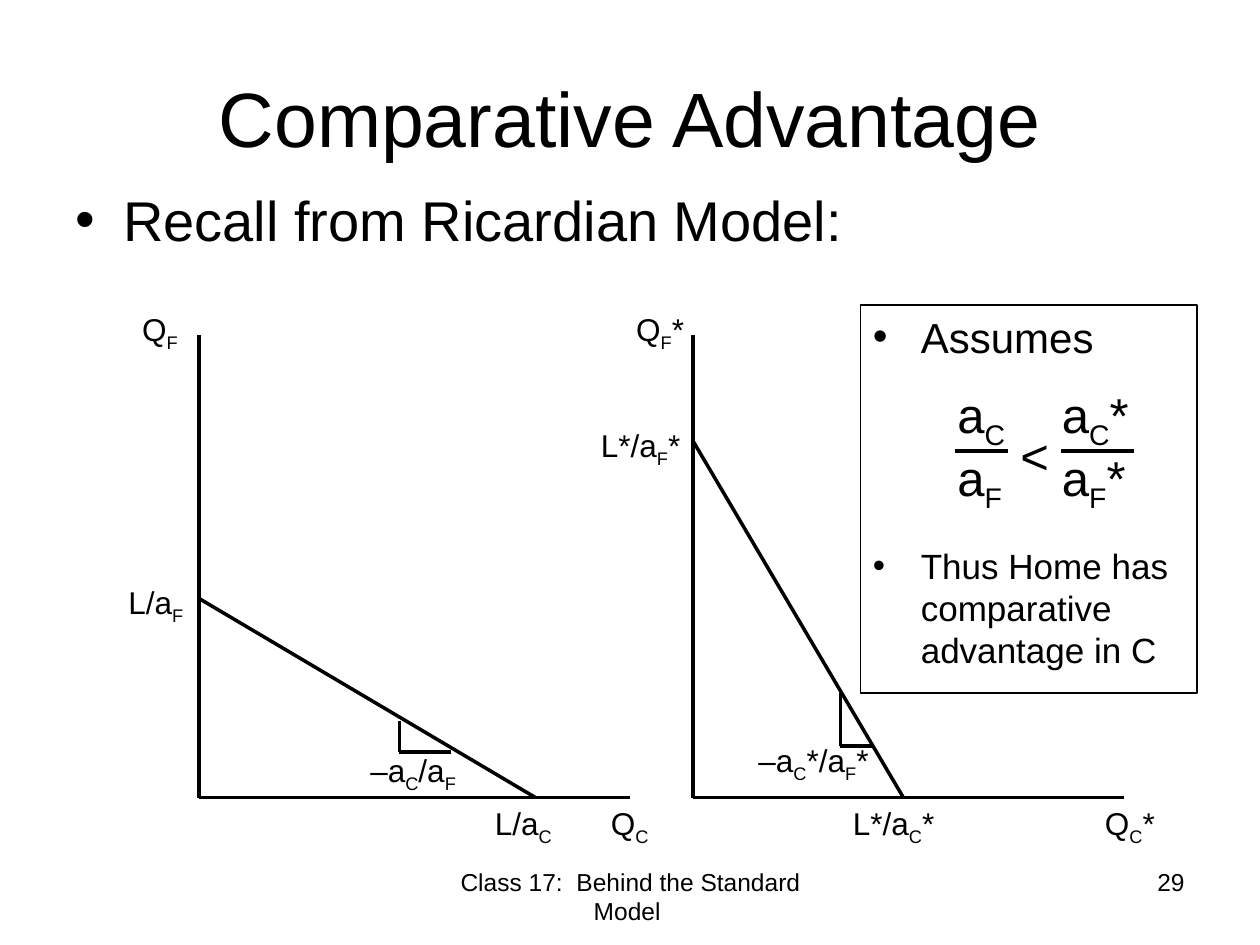
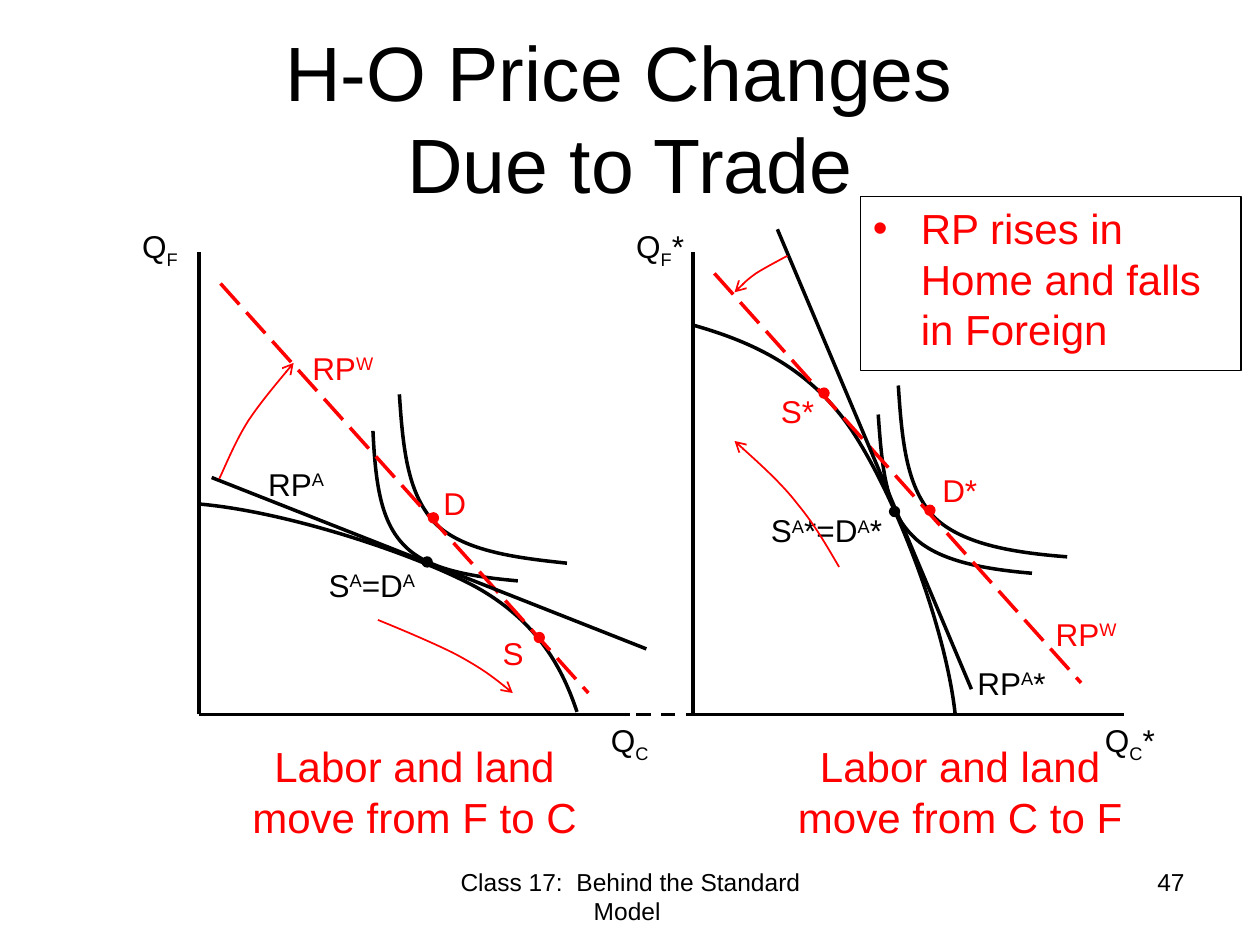
"""Build two trade-theory slides: Ricardian comparative advantage and H-O price changes."""
from lxml import etree
from pptx import Presentation
from pptx.dml.color import RGBColor
from pptx.enum.dml import MSO_LINE
from pptx.enum.shapes import MSO_CONNECTOR, MSO_SHAPE
from pptx.enum.text import MSO_ANCHOR, PP_ALIGN
from pptx.oxml.ns import qn
from pptx.util import Inches, Pt

BLACK = RGBColor(0x00, 0x00, 0x00)
RED = RGBColor(0xFF, 0x00, 0x00)
LEFT, CENTER, RIGHT = PP_ALIGN.LEFT, PP_ALIGN.CENTER, PP_ALIGN.RIGHT
TOP, MIDDLE = MSO_ANCHOR.TOP, MSO_ANCHOR.MIDDLE
STRAIGHT, RECTANGLE, OVAL = MSO_CONNECTOR.STRAIGHT, MSO_SHAPE.RECTANGLE, MSO_SHAPE.OVAL
DASH, LONG_DASH = MSO_LINE.DASH, MSO_LINE.LONG_DASH

FONT = "Arial"
FOOTER = "Class 17:  Behind the Standard Model "
BASELINES = {"_": "-25000", "^": "30000"}
LABEL_HEIGHTS = {18: 0.4, 28: 0.57}
HOME_X, FOREIGN_X = 1.58, 5.5
AXIS_WIDTH, AXIS_HEIGHT = 3.42, 3.67
DOT = 0.08
UNITS_PER_INCH = 100

RICARDO = {
    "title": ["Comparative Advantage"],
    "number": "29",
    "base": 6.33,
    "lines": [
        ((1.58, 4.75), (4.25, 6.33)),
        ((5.5, 3.5), (7.17, 6.33)),
        ((7.58, 3.58), (8, 3.58)),
        ((8.42, 3.58), (9, 3.58)),
        ((6.67, 5.5), (6.67, 5.92)),
        ((6.92, 5.92), (6.67, 5.92)),
        ((3.17, 5.72), (3.17, 5.97)),
        ((3.58, 5.97), (3.17, 5.97)),
    ],
    "labels": [
        ("L/a_F", 0.92, 4.58, 0.66, 18, BLACK),
        ("L/a_C", 3.83, 6.33, 0.67, 18, BLACK),
        ("L*/a_F*", 4.67, 3.33, 0.85, 18, BLACK),
        ("L*/a_C*", 6.67, 6.33, 0.87, 18, BLACK),
        ("–a_C*/a_F*", 5.92, 5.83, 1.11, 18, BLACK),
        ("–a_C/a_F", 2.84, 5.91, 0.92, 18, BLACK),
        ("a_C", 7.5, 3, 0.67, 28, BLACK),
        ("a_F", 7.5, 3.5, 0.67, 28, BLACK),
        ("a_C*", 8.33, 3, 1.03, 28, BLACK),
        ("a_F*", 8.33, 3.5, 0.75, 28, BLACK),
        ("<", 8, 3.33, 0.42, 28, BLACK),
    ],
    "note_box": (6.83, 2.42, 2.67, 3.08),
    "notes": [("Assumes", 24, BLACK, 0),
              ("Thus Home has comparative advantage in C", 20, BLACK, 104.5)],
}

PRICES = {
    "title": ["H-O Price Changes ", "Due to Trade"],
    "number": "47",
    "base": 5.67,
    "lines": [
        ((1.75, 2.25), (4.67, 5.5), RED, LONG_DASH),
        ((5.67, 2.17), (8.58, 5.42), RED, LONG_DASH),
        ((5.75, 5.67), (4.92, 5.67), BLACK, DASH),
        ((1.68, 3.79), (5.13, 5.15)),
        ((6.17, 1.82), (7.71, 5.47)),
    ],
    "curves": [
        [(1.58, 4), (2.27, 4.06), (3.28, 4.39), (3.78, 4.66),
         (4.28, 4.94), (4.47, 5.32), (4.58, 5.65)],
        [(7.58, 5.66), (7.5, 4.95), (7.1, 3.92), (6.75, 3.4),
         (6.4, 2.89), (5.92, 2.7), (5.5, 2.58)],
        [(4.5, 4.47), (4.12, 4.43), (3.69, 4.38), (3.46, 4.16),
         (3.24, 3.93), (3.2, 3.59), (3.17, 3.13)],
        [(8.47, 4.42), (8.08, 4.39), (7.65, 4.33), (7.42, 4.11),
         (7.2, 3.88), (7.16, 3.53), (7.13, 3.06)],
        [(8.19, 4.55), (7.84, 4.52), (7.44, 4.46), (7.24, 4.25),
         (7.03, 4.04), (7, 3.72), (6.97, 3.29)],
        [(4.11, 4.61), (3.78, 4.58), (3.4, 4.53), (3.21, 4.33),
         (3.02, 4.14), (2.98, 3.83), (2.96, 3.42)],
    ],
    "shifts": [
        [(1.74, 3.8), (1.81, 3.65), (1.87, 3.5), (1.97, 3.34),
         (2.07, 3.19), (2.33, 2.88), (2.33, 2.88)],
        [(6.25, 2.03), (6.25, 2.03), (6.06, 2.13), (6, 2.17),
         (5.93, 2.22), (5.88, 2.27), (5.83, 2.32)],
        [(3, 4.92), (3, 4.92), (3.47, 5.11), (3.65, 5.21),
         (3.83, 5.31), (3.95, 5.4), (4.07, 5.5)],
        [(6.66, 4.5), (6.56, 4.33), (6.47, 4.17), (6.33, 4),
         (6.2, 3.83), (5.83, 3.5), (5.83, 3.5)],
    ],
    "dots": [(4.24, 5.02, RED), (6.5, 3.08, RED), (3.4, 4.07, RED),
             (7.34, 4.01, RED), (3.35, 4.42, BLACK), (7.06, 4.02, BLACK)],
    "labels": [
        ("S^A=D^A", 2.51, 4.44, 0.93, 18, BLACK),
        ("D", 3.42, 3.79, 0.38, 18, RED),
        ("S*", 6.1, 3.06, 0.47, 18, RED),
        ("D*", 7.38, 3.69, 0.48, 18, RED),
        ("S^A*=D^A*", 6.02, 4.01, 1.12, 18, BLACK),
        ("RP^A", 2.03, 3.64, 0.66, 18, BLACK),
        ("RP^W", 2.38, 2.72, 0.71, 18, RED),
        ("RP^A*", 7.66, 5.22, 0.76, 18, BLACK),
        ("RP^W", 8.28, 4.83, 0.71, 18, RED),
        ("S", 3.89, 4.98, 0.37, 18, RED),
    ],
    "note_box": (6.83, 1.56, 3.02, 1.38),
    "notes": [("RP rises in Home and falls in Foreign", 24, RED, 0)],
}
RECALL = [("Recall from Ricardian Model:", 32, BLACK, 0)]
RECALL_BOX = (0.5, 1.42, 9, 0.83)
MOVES = [("Labor and land move from F to C", 1.75), ("Labor and land move from C to F", 6.08)]


def add_run(paragraph, text, size, color, baseline=None):
    run = paragraph.add_run()
    run.text = text
    run.font.name, run.font.size = FONT, Pt(size)
    run.font.color.rgb = color
    if baseline:
        run._r.get_or_add_rPr().set("baseline", baseline)


def add_marked_runs(paragraph, text, size, color):
    """Turn _x into a subscript and ^x into a superscript."""
    plain, letters = "", iter(text)
    for letter in letters:
        if letter in BASELINES:
            add_run(paragraph, plain, size, color)
            add_run(paragraph, next(letters), size, color, BASELINES[letter])
            plain = ""
        else:
            plain += letter
    if plain:
        add_run(paragraph, plain, size, color)


def add_text(slide, box, lines, size, color=BLACK, align=LEFT, anchor=TOP):
    frame = slide.shapes.add_textbox(*map(Inches, box)).text_frame
    frame.word_wrap, frame.vertical_anchor = True, anchor
    paragraph = frame.paragraphs[0]
    paragraph.alignment = align
    for index, line in enumerate(lines):
        if index:
            paragraph.add_line_break()
        add_marked_runs(paragraph, line, size, color)
    return frame


def add_label(slide, text, x, y, width, size, color, height=None):
    box = (x, y, width, height or LABEL_HEIGHTS[size])
    add_text(slide, box, [text], size, color).margin_right = 0


def add_bullets(frame, bullets):
    frame.word_wrap, frame.vertical_anchor = True, TOP
    for index, (text, size, color, space) in enumerate(bullets):
        paragraph = frame.add_paragraph() if index else frame.paragraphs[0]
        paragraph.alignment, paragraph.space_before = LEFT, Pt(space)
        properties = paragraph._p.get_or_add_pPr()
        properties.set("marL", str(Inches(0.38)))
        properties.set("indent", str(-Inches(0.38)))
        etree.SubElement(properties, qn("a:buFont")).set("typeface", FONT)
        etree.SubElement(properties, qn("a:buChar")).set("char", "•")
        add_run(paragraph, text, size, color)


def set_line(shape, color, width):
    shape.line.color.rgb = color
    shape.line.width = Pt(width)


def add_line(slide, start, end, color=BLACK, dash=None):
    line = slide.shapes.add_connector(STRAIGHT, *map(Inches, start + end))
    set_line(line, color, 2)
    if dash:
        line.line.dash_style = dash
    etree.SubElement(line._element.spPr, qn("a:effectLst"))


def add_curve(slide, points, color=BLACK, width=2, arrow=False):
    """Draw a chain of cubic curves; every third point lies on the curve."""
    track = [(round(x * UNITS_PER_INCH), round(y * UNITS_PER_INCH)) for x, y in points]
    builder = slide.shapes.build_freeform(*track[0], scale=Inches(1) / UNITS_PER_INCH)
    builder.add_line_segments(track[1:], close=False)
    curve = builder.convert_to_shape()
    outline = next(curve._element.iter(qn("a:path")))
    steps = outline.findall(qn("a:lnTo"))
    for first in range(0, len(steps), 3):
        bend = etree.SubElement(outline, qn("a:cubicBezTo"))
        for step in steps[first:first + 3]:
            bend.append(step[0])
            outline.remove(step)
    curve.fill.background()
    curve.shadow.inherit = False
    set_line(curve, color, width)
    if arrow:
        etree.SubElement(curve.line._get_or_add_ln(), qn("a:tailEnd")).set("type", "arrow")


def add_dot(slide, x, y, color):
    dot = slide.shapes.add_shape(OVAL, *map(Inches, (x, y, DOT, DOT)))
    dot.shadow.inherit = False
    dot.fill.solid()
    dot.fill.fore_color.rgb = color
    set_line(dot, color, 0.75)


def add_note(slide, box, notes):
    note = slide.shapes.add_shape(RECTANGLE, *map(Inches, box))
    note.shadow.inherit = False
    note.fill.background()
    set_line(note, BLACK, 0.75)
    add_bullets(note.text_frame, notes)


def add_axes(slide, x, base, star):
    add_line(slide, (x, base), (x + AXIS_WIDTH, base))
    add_line(slide, (x, base), (x, base - AXIS_HEIGHT))
    add_label(slide, "Q_C" + star, x + 3.17, base, 0.75, 18, BLACK, 0.71)
    add_label(slide, "Q_F" + star, x - 0.55, base - 3.92, 0.75, 18, BLACK, 0.71)


def add_slide(deck, content):
    slide = deck.slides.add_slide(deck.slide_layouts[6])
    add_text(slide, (0.5, 0.3, 9, 1.25), content["title"], 44, align=CENTER, anchor=MIDDLE)
    add_text(slide, (7.17, 6.83, 2.33, 0.52), [content["number"]], 14, align=RIGHT)
    add_text(slide, (3.42, 6.83, 3.17, 0.52), [FOOTER], 14, align=CENTER)
    for x, star in ((HOME_X, ""), (FOREIGN_X, "*")):
        add_axes(slide, x, content["base"], star)
    for curve in content.get("curves", []):
        add_curve(slide, curve)
    for line in content["lines"]:
        add_line(slide, *line)
    for dot in content.get("dots", []):
        add_dot(slide, *dot)
    add_note(slide, content["note_box"], content["notes"])
    for label in content["labels"]:
        add_label(slide, *label)
    for shift in content.get("shifts", []):
        add_curve(slide, shift, RED, 1, arrow=True)
    return slide


def main():
    deck = Presentation()
    deck.slide_width, deck.slide_height = Inches(10), Inches(7.5)
    ricardo = add_slide(deck, RICARDO)
    recall = ricardo.shapes.add_textbox(*map(Inches, RECALL_BOX))
    add_bullets(recall.text_frame, RECALL)
    prices = add_slide(deck, PRICES)
    for text, x in MOVES:
        add_text(prices, (x, 5.83, 3.08, 0.91), [text], 24, RED, CENTER)
    deck.save("out.pptx")


if __name__ == "__main__":
    main()
